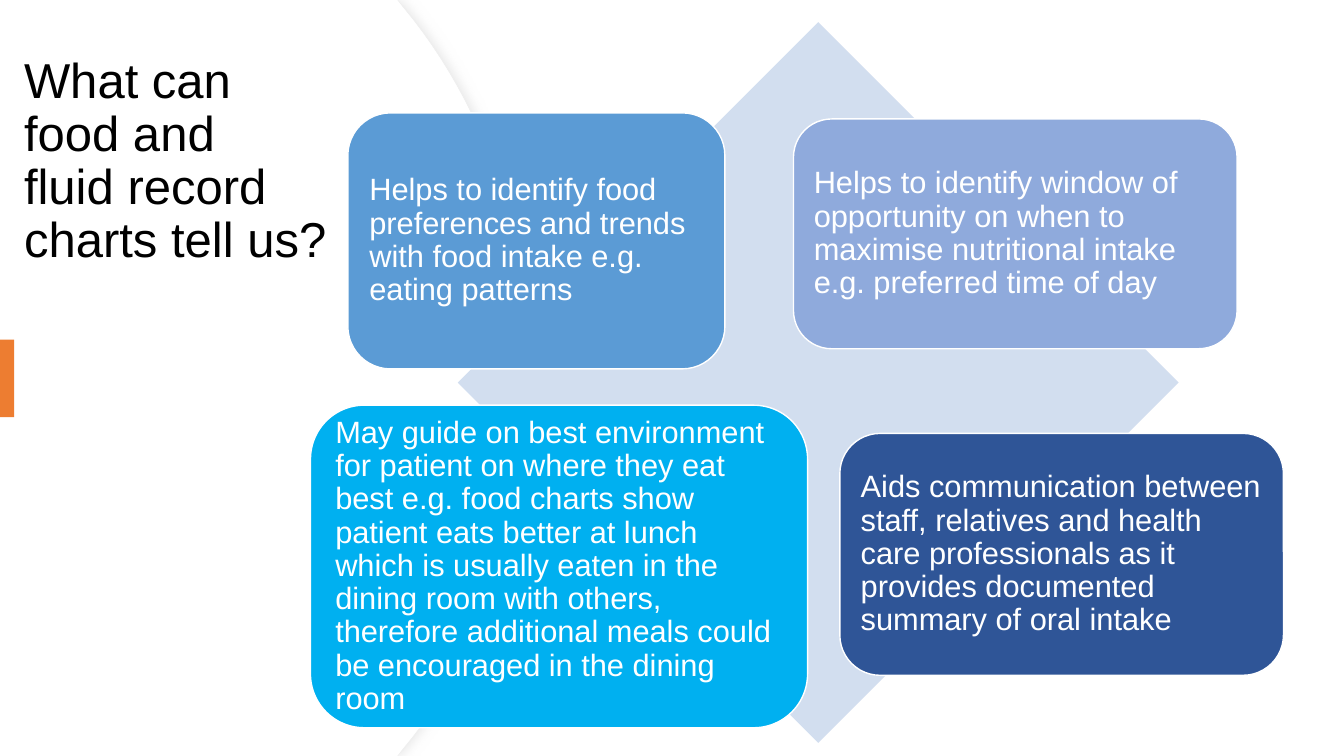
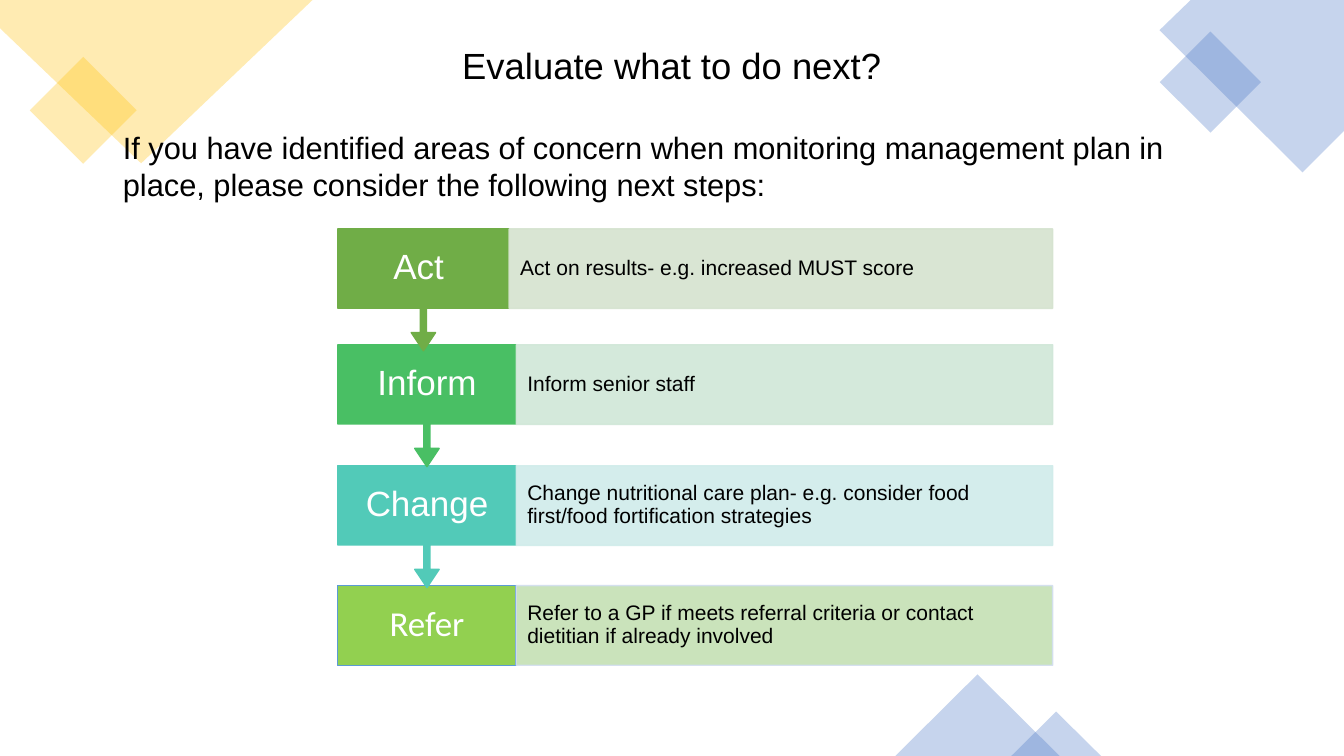
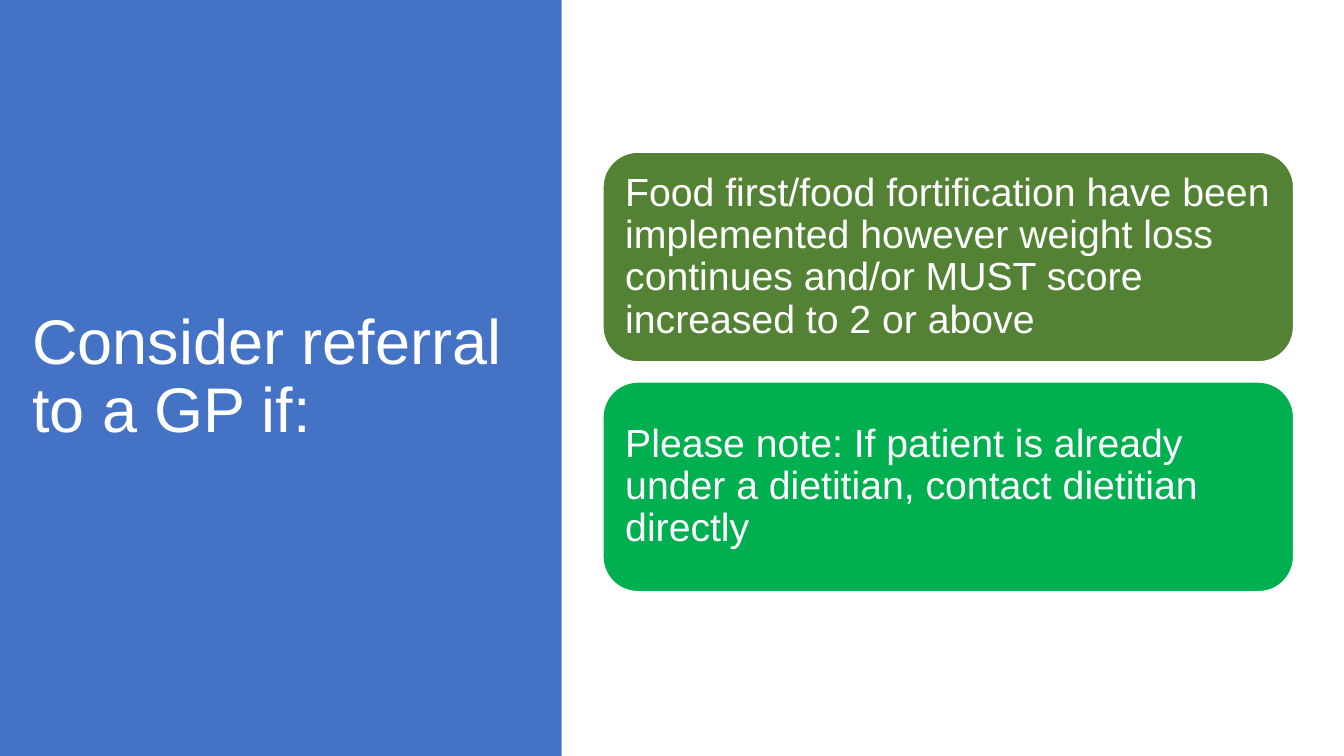
from dataclasses import dataclass
from typing import Optional

from lxml import etree
from pptx import Presentation
from pptx.dml.color import RGBColor
from pptx.enum.shapes import MSO_SHAPE
from pptx.enum.text import MSO_ANCHOR, PP_ALIGN
from pptx.oxml.ns import qn
from pptx.util import Inches, Pt

RECTANGLE = MSO_SHAPE.RECTANGLE
ROUNDED = MSO_SHAPE.ROUNDED_RECTANGLE
DIAMOND = MSO_SHAPE.DIAMOND
TRIANGLE = MSO_SHAPE.ISOSCELES_TRIANGLE
CALLOUT = MSO_SHAPE.DOWN_ARROW_CALLOUT
MIDDLE = MSO_ANCHOR.MIDDLE
TOP = MSO_ANCHOR.TOP
LEFT = PP_ALIGN.LEFT
CENTER = PP_ALIGN.CENTER


@dataclass(frozen=True)
class Theme:
    font: str = "Arial"
    alternate_font: str = "Calibri"
    white: str = "FFFFFF"
    black: str = "000000"
    blue: str = "4472C4"
    light_blue: str = "5B9BD5"
    pale_blue: str = "D2DEEF"
    gold: str = "FFC000"
    orange: str = "ED7D31"
    arc_line: str = "EFEFEF"
    arc_shadow: str = "D9D9D9"
    side_title: int = 35
    panel_title: int = 45
    heading: int = 26
    body: int = 22
    note: int = 28
    step: int = 25
    detail: int = 15
    tight: float = 0.9


THEME = Theme()


@dataclass(frozen=True)
class Box:
    left: float
    top: float
    width: float
    height: float


@dataclass(frozen=True)
class TextStyle:
    size: int
    color: str = THEME.white
    font: str = THEME.font
    align: PP_ALIGN = LEFT
    spacing: float = THEME.tight
    space_after: float = 0


@dataclass(frozen=True)
class Card:
    box: Box
    fill: str
    text: str


@dataclass(frozen=True)
class Accent:
    kind: MSO_SHAPE
    box: Box
    color: str
    rotation: float = 0


@dataclass(frozen=True)
class Step:
    name: str
    detail: str
    top: float
    width: float
    fill: str
    line: str
    tint: str
    tint_line: str
    kind: MSO_SHAPE = CALLOUT
    font: str = THEME.font


def paint(shape, fill: str, line: Optional[str] = None, opacity: int = 100, weight: float = 1) -> None:
    shape.shadow.inherit = False
    shape.fill.solid()
    shape.fill.fore_color.rgb = RGBColor.from_string(fill)
    if line:
        shape.line.color.rgb = RGBColor.from_string(line)
        shape.line.width = Pt(weight)
    else:
        shape.line.fill.background()
    if opacity < 100:
        for color in list(shape.element.spPr.iter(qn("a:srgbClr"))):
            etree.SubElement(color, qn("a:alpha"), val=str(opacity * 1000))


def add_shape(slide, kind: MSO_SHAPE, box: Box, fill: str, line: Optional[str] = None, opacity: int = 100):
    shape = slide.shapes.add_shape(
        kind, Inches(box.left), Inches(box.top), Inches(box.width), Inches(box.height))
    paint(shape, fill, line, opacity)
    return shape


def add_outline(slide, points: list, fill: str, line: Optional[str] = None, opacity: int = 100):
    corners = [(Inches(x), Inches(y)) for x, y in points]
    builder = slide.shapes.build_freeform(*corners[0])
    builder.add_line_segments(corners[1:], close=True)
    shape = builder.convert_to_shape()
    paint(shape, fill, line, opacity, 0.75)
    return shape


def set_frame(shape, inset_x: float = 0.1, inset_y: float = 0.05, anchor: MSO_ANCHOR = MIDDLE):
    frame = shape.text_frame
    frame.word_wrap = True
    frame.vertical_anchor = anchor
    frame.margin_left = frame.margin_right = Inches(inset_x)
    frame.margin_top = frame.margin_bottom = Inches(inset_y)
    return frame


def write(paragraph, text: str, style: TextStyle) -> None:
    paragraph.alignment = style.align
    paragraph.line_spacing = style.spacing
    paragraph.space_after = Pt(style.space_after)
    for index, line in enumerate(text.split("\n")):
        if index:
            paragraph.add_line_break()
        run = paragraph.add_run()
        run.text = line
        run.font.size = Pt(style.size)
        run.font.name = style.font
        run.font.color.rgb = RGBColor.from_string(style.color)


def add_text_box(slide, box: Box, anchor: MSO_ANCHOR = MIDDLE):
    shape = slide.shapes.add_textbox(
        Inches(box.left), Inches(box.top), Inches(box.width), Inches(box.height))
    return set_frame(shape, anchor=anchor)


def add_title(slide, box: Box, text: str, style: TextStyle) -> None:
    write(add_text_box(slide, box).paragraphs[0], text, style)


def add_card(slide, card: Card, size: int, inset: float) -> None:
    shape = add_shape(slide, ROUNDED, card.box, card.fill, THEME.white)
    write(set_frame(shape, inset, inset).paragraphs[0], card.text, TextStyle(size))


def curve(start: tuple, first: tuple, second: tuple, end: tuple, pieces: int = 24) -> list:
    points = []
    for index in range(pieces + 1):
        t = index / pieces
        weights = ((1 - t) ** 3, 3 * t * (1 - t) ** 2, 3 * t * t * (1 - t), t ** 3)
        points.append(tuple(
            sum(weight * value for weight, value in zip(weights, values))
            for values in zip(start, first, second, end)))
    return points


def arc_points(reach: float) -> list:
    shoulder, bend = reach - 1.26, reach - 0.48
    upper = curve((shoulder, 0.08), (bend, 1.02), (reach, 2.32), (reach, 3.75))
    lower = [(x, 7.5 - y) for x, y in reversed(upper[:-1])]
    return [(0, 0), (3.94, 0), *upper, *lower, (3.94, 7.5), (0, 7.5)]


def add_soft_shadow(shape, color: str) -> None:
    effects = shape.element.spPr.find(qn("a:effectLst"))
    shadow = etree.SubElement(
        effects, qn("a:outerShdw"), blurRad=str(Pt(7)), dist=str(Pt(3)), dir="0")
    shade = etree.SubElement(shadow, qn("a:srgbClr"), val=color)
    etree.SubElement(shade, qn("a:alpha"), val="50000")


BENEFITS = [
    Card(Box(3.45, 1.12, 3.74, 2.54), THEME.light_blue,
         "Helps to identify food preferences and trends with food intake e.g. eating patterns"),
    Card(Box(7.87, 1.18, 4.4, 2.28), "8FAADC",
         "Helps to identify window of opportunity on when to maximise nutritional intake "
         "e.g. preferred time of day"),
    Card(Box(3.08, 4.02, 4.93, 3.2), "00B0F0",
         "May guide on best environment for patient on where they eat best e.g. food charts show "
         "patient eats better at lunch which is usually eaten in the dining room with others, "
         "therefore additional meals could be encouraged in the dining room"),
    Card(Box(8.33, 4.3, 4.4, 2.4), "2F5597",
         "Aids communication between staff, relatives and health care professionals as it "
         "provides documented summary of oral intake"),
]

ACCENTS = [
    Accent(RECTANGLE, Box(0.45, 0.72, 0.75, 0.75), THEME.gold, 45),
    Accent(RECTANGLE, Box(11.65, 0.46, 0.71, 0.71), THEME.blue, 45),
    Accent(TRIANGLE, Box(8.88, 6.69, 1.63, 0.81), THEME.blue),
    Accent(TRIANGLE, Box(10.03, 7.06, 0.89, 0.44), THEME.blue),
]

CORNERS = [
    ([(0, 0), (3.1, 0), (1.4, 1.62), (0, 0.28)], THEME.gold),
    ([(11.81, 0), (13.33, 0), (13.33, 1.3), (12.92, 1.71), (11.5, 0.3)], THEME.blue),
]

STEPS = [
    Step("Act ", "Act on results- e.g. increased MUST score",
         2.27, 1.7, "70AD47", "70AD47", "D5E3CF", "D5E3CF"),
    Step("Inform", "Inform senior staff",
         3.42, 1.77, "49BF64", "49BF64", "D0E7D8", "D0E7D8"),
    Step("Change", "Change nutritional care plan- e.g. consider food first/food fortification strategies",
         4.62, 1.77, "52CAB8", "52CAB8", "D0ECEA", "D0ECEA"),
    Step("Refer", "Refer to a GP if meets referral criteria or contact dietitian if already involved",
         5.81, 1.77, "92D050", THEME.light_blue, "C5E0B4", THEME.pale_blue,
         RECTANGLE, THEME.alternate_font),
]

REFERRAL_NOTES = [
    ("548235", "Food first/food fortification have been implemented however weight loss continues "
               "and/or MUST score increased to 2 or above"),
    ("00B050", "Please note: If patient is already under a dietitian, contact dietitian directly"),
]


def add_step(slide, step: Step) -> None:
    left, right, row_height, callout_height = 3.35, 10.44, 0.79, 1.21
    height = callout_height if step.kind == CALLOUT else row_height
    label = add_shape(slide, step.kind, Box(left, step.top, step.width, height), step.fill, step.line)
    if step.kind == CALLOUT:
        for index, value in enumerate((0.05, 0.1, 0.15, 0.65)):
            label.adjustments[index] = value
    write(set_frame(label, 0.13, 0.19).paragraphs[0], step.name,
          TextStyle(THEME.step, font=step.font, align=CENTER))
    detail_left = left + step.width
    detail = add_shape(slide, RECTANGLE, Box(detail_left, step.top, right - detail_left, row_height),
                       step.tint, step.tint_line, 90)
    write(set_frame(detail, 0.11, 0.21).paragraphs[0], step.detail,
          TextStyle(THEME.detail, THEME.black))


def build_benefits(slide) -> None:
    edge = add_outline(slide, arc_points(5.27), THEME.white, THEME.arc_line)
    add_soft_shadow(edge, THEME.arc_shadow)
    add_outline(slide, arc_points(5.26), THEME.white)
    add_title(slide, Box(0.14, 0.1, 3.94, 3.02),
              "What can \nfood and \nfluid record charts tell us?",
              TextStyle(THEME.side_title, THEME.black))
    add_shape(slide, RECTANGLE, Box(0, 3.37, 0.14, 0.77), THEME.orange)
    add_shape(slide, DIAMOND, Box(4.54, 0.22, 7.15, 7.15), THEME.pale_blue)
    for card in BENEFITS:
        add_card(slide, card, THEME.body, 0.09)


def build_next_steps(slide) -> None:
    for points, color in CORNERS:
        add_outline(slide, points, color, opacity=30)
    for accent in ACCENTS:
        shape = add_shape(slide, accent.kind, accent.box, accent.color, opacity=30)
        shape.rotation = accent.rotation
    for step in reversed(STEPS):
        add_step(slide, step)
    frame = add_text_box(slide, Box(1.12, 0.38, 11.09, 2.12), TOP)
    write(frame.paragraphs[0], "Evaluate what to do next?",
          TextStyle(THEME.heading, THEME.black, align=CENTER, spacing=1.0, space_after=30))
    write(frame.add_paragraph(),
          "If you have identified areas of concern when monitoring management plan in place, "
          "please consider the following next steps:",
          TextStyle(THEME.body, THEME.black, spacing=1.0))


def build_referral(slide) -> None:
    add_shape(slide, RECTANGLE, Box(0, 0, 5.57, 7.5), THEME.blue)
    add_title(slide, Box(0.22, 2.07, 5.35, 3.36), "Consider referral to a GP if:",
              TextStyle(THEME.panel_title))
    for index, (fill, text) in enumerate(REFERRAL_NOTES):
        card = Card(Box(5.98, 1.51 + index * 2.28, 6.85, 2.08), fill, text)
        add_card(slide, card, THEME.note, 0.12)


def main() -> None:
    presentation = Presentation()
    presentation.slide_width = Inches(13.33)
    presentation.slide_height = Inches(7.5)
    blank = presentation.slide_layouts[6]
    for build in (build_benefits, build_next_steps, build_referral):
        build(presentation.slides.add_slide(blank))
    presentation.save("out.pptx")


if __name__ == "__main__":
    main()
